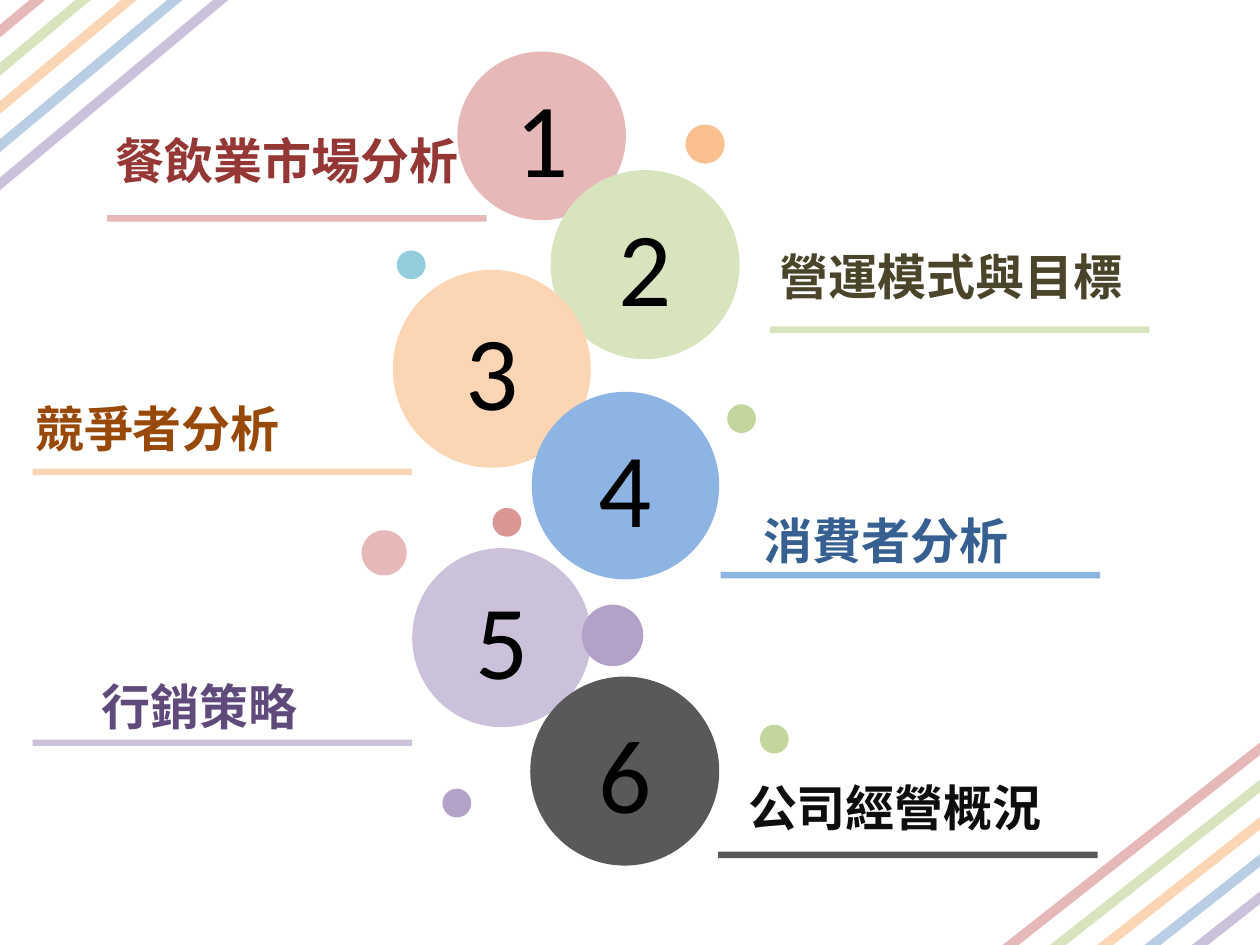
from dataclasses import dataclass

from lxml.etree import SubElement
from pptx import Presentation
from pptx.dml.color import RGBColor
from pptx.enum.shapes import MSO_SHAPE
from pptx.enum.text import MSO_ANCHOR, PP_ALIGN
from pptx.oxml.ns import qn
from pptx.shapes.autoshape import Shape
from pptx.slide import Slide
from pptx.text.text import Font
from pptx.util import Cm, Pt


@dataclass(frozen=True)
class Theme:
    rose: str = "E6B9B8"
    lime: str = "D7E4BD"
    peach: str = "FCD5B5"
    sky: str = "8EB4E3"
    mist: str = "B9CDE5"
    lilac: str = "CCC1DA"
    gray: str = "595959"
    black: str = "000000"
    orange: str = "FAC090"
    coral: str = "D99694"
    plum: str = "B3A2C7"
    leaf: str = "C3D69B"
    aqua: str = "93CDDD"
    digit: int = 60
    label: int = 28
    latin: str = "Calibri"
    asian: str = "Noto Sans CJK SC"


@dataclass(frozen=True)
class Disc:
    left: float
    top: float
    size: float
    fill: str


@dataclass(frozen=True)
class Topic:
    text: str
    ink: str
    disc: Disc
    rule: tuple[float, float]
    label: tuple[float, float]
    high: float = 2.64


LOOK = Theme()
LENGTH = 7.65
STEP = 0.42

TOPICS = (
    Topic("餐飲業市場分析", "953735", Disc(9.22, 1.04, 3.4, LOOK.rose), (2.16, 4.34), (2.08, 2.51)),
    Topic("營運模式與目標", "4A452A", Disc(11.1, 3.43, 3.81, LOOK.lime), (15.52, 6.58), (15.47, 4.85), 1.45),
    Topic("競爭者分析", "984807", Disc(7.92, 5.44, 3.99, LOOK.peach), (0.66, 9.45), (0.46, 7.9)),
    Topic("消費者分析", "376092", Disc(10.72, 7.9, 3.78, LOOK.sky), (14.53, 11.53), (15.14, 10.16)),
    Topic("行銷策略", "604A7B", Disc(8.31, 11.05, 3.61, LOOK.lilac), (0.66, 14.91), (1.8, 13.51)),
    Topic("公司經營概況", "0D0D0D", Disc(10.69, 13.64, 3.81, LOOK.gray), (14.48, 17.17), (14.83, 15.54), 1.45),
)

DOTS = (
    Disc(13.82, 2.51, 0.79, LOOK.orange),
    Disc(9.93, 10.24, 0.58, LOOK.coral),
    Disc(8.92, 15.9, 0.58, LOOK.plum),
    Disc(15.32, 14.61, 0.58, LOOK.leaf),
    Disc(7.29, 10.69, 0.91, LOOK.rose),
    Disc(11.73, 12.19, 1.24, LOOK.plum),
    Disc(8, 5.05, 0.58, LOOK.aqua),
    Disc(14.66, 8.15, 0.58, LOOK.leaf),
)

BANDS = (LOOK.rose, LOOK.lime, LOOK.peach, LOOK.mist, LOOK.lilac)


def paint(shape: Shape, fill: str) -> Shape:
    """Give a shape a flat fill without line or shadow."""
    shape.shadow.inherit = False
    shape.fill.solid()
    shape.fill.fore_color.rgb = RGBColor.from_string(fill)
    shape.line.fill.background()
    return shape


def style(font: Font, name: str, size: int, ink: str) -> None:
    """Set the face, size and colour of a font."""
    font.name = name
    font.size = Pt(size)
    font.color.rgb = RGBColor.from_string(ink)


def draw_disc(slide: Slide, disc: Disc) -> Shape:
    """Draw a filled circle."""
    size = Cm(disc.size)
    shape = slide.shapes.add_shape(MSO_SHAPE.OVAL, Cm(disc.left), Cm(disc.top), size, size)
    return paint(shape, disc.fill)


def draw_digit(slide: Slide, disc: Disc, digit: int) -> None:
    """Draw a circle with its number."""
    frame = draw_disc(slide, disc).text_frame
    frame.text = str(digit)
    frame.vertical_anchor = MSO_ANCHOR.MIDDLE
    line = frame.paragraphs[0]
    line.alignment = PP_ALIGN.CENTER
    style(line.runs[0].font, LOOK.latin, LOOK.digit, LOOK.black)


def draw_bar(slide: Slide, left: float, top: float, high: float, fill: str, turn: float = 0) -> None:
    """Draw a thin bar, turned by some degrees."""
    shape = slide.shapes.add_shape(MSO_SHAPE.RECTANGLE, Cm(left), Cm(top), Cm(LENGTH), Cm(high))
    paint(shape, fill).rotation = turn


def draw_bands(slide: Slide, left: float, top: float, turn: float) -> None:
    """Draw the slanted bands of one corner."""
    for place, fill in enumerate(BANDS):
        shift = place * STEP
        draw_bar(slide, left + shift, top + shift, 0.2, fill, turn)


def draw_label(slide: Slide, topic: Topic) -> None:
    """Write the name of a topic."""
    left, top = topic.label
    frame = slide.shapes.add_textbox(Cm(left), Cm(top), Cm(8.41), Cm(topic.high)).text_frame
    frame.word_wrap = True
    frame.text = topic.text
    run = frame.paragraphs[0].runs[0]
    style(run.font, LOOK.asian, LOOK.label, topic.ink)
    run.font.bold = True
    SubElement(run._r.get_or_add_rPr(), qn("a:ea"), typeface=LOOK.asian)


def main() -> None:
    """Build and save the slide."""
    deck = Presentation()
    deck.slide_width, deck.slide_height = Cm(25.4), Cm(19.05)
    slide = deck.slides.add_slide(deck.slide_layouts[6])
    for digit, topic in enumerate(TOPICS, 1):
        draw_digit(slide, topic.disc, digit)
    draw_bands(slide, -3.35, 0.13, 140.2)
    draw_bands(slide, 19.23, 16.84, 321.8)
    for topic in TOPICS:
        draw_bar(slide, *topic.rule, 0.13, topic.disc.fill)
        draw_label(slide, topic)
    for dot in DOTS:
        draw_disc(slide, dot)
    deck.save("out.pptx")


if __name__ == "__main__":
    main()
